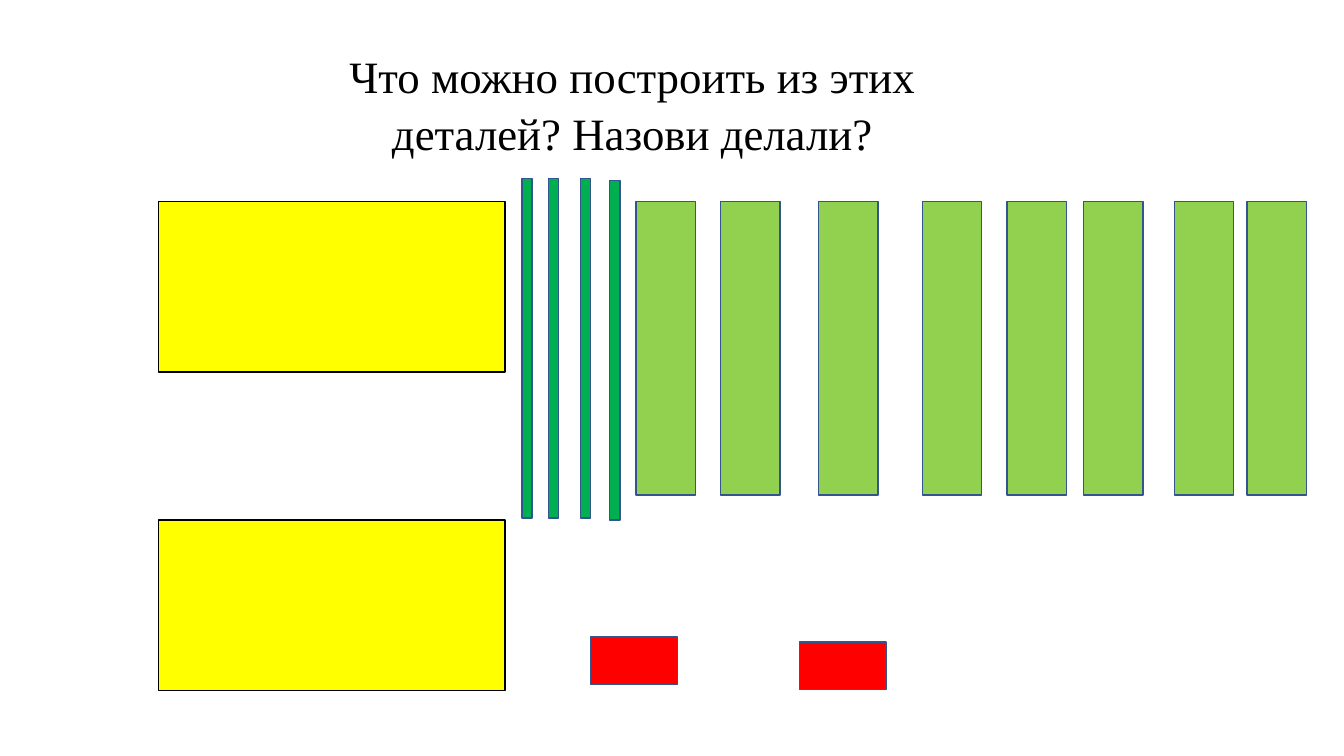
from dataclasses import dataclass

from pptx import Presentation
from pptx.dml.color import RGBColor
from pptx.enum.shapes import MSO_SHAPE
from pptx.enum.text import PP_ALIGN
from pptx.util import Inches, Pt


@dataclass(frozen=True)
class Theme:
    font: str = "Times New Roman"
    size: int = 32
    edge: int = 1
    ink: str = "000000"
    blue: str = "325491"
    yellow: str = "FFFF00"
    green: str = "00B050"
    lime: str = "92D050"
    red: str = "FF0000"


class Board:
    COLS, ROWS = 80, 45

    def __init__(self, deck, theme):
        self.theme = theme
        self.slide = deck.slides.add_slide(deck.slide_layouts[6])
        self.col = deck.slide_width / self.COLS
        self.row = deck.slide_height / self.ROWS

    def place(self, x, y, w, h):
        return (round(x * self.col), round(y * self.row),
                round(w * self.col), round(h * self.row))

    def block(self, spot, size, fill, line):
        shape = self.slide.shapes.add_shape(
            MSO_SHAPE.RECTANGLE, *self.place(*spot, *size))
        shape.shadow.inherit = False
        shape.fill.solid()
        shape.fill.fore_color.rgb = RGBColor.from_string(fill)
        shape.line.color.rgb = RGBColor.from_string(line)
        shape.line.width = Pt(self.theme.edge)

    def blocks(self, spots, size, fill, line):
        for spot in spots:
            self.block(spot, size, fill, line)

    def title(self, text, spot, size):
        box = self.slide.shapes.add_textbox(*self.place(*spot, *size))
        box.text_frame.word_wrap = True
        para = box.text_frame.paragraphs[0]
        para.text = text
        para.alignment = PP_ALIGN.CENTER
        para.line_spacing = 1.05
        para.font.name = self.theme.font
        para.font.size = Pt(self.theme.size)
        para.font.color.rgb = RGBColor.from_string(self.theme.ink)


def main():
    deck = Presentation()
    deck.slide_width, deck.slide_height = Inches(13.33), Inches(7.5)
    theme = Theme()
    board = Board(deck, theme)

    board.title("Что можно построить из этих деталей? Назови делали?",
                (17.64, 2.46), (40.02, 7.08))

    walls = [(9.42, y) for y in (12, 30.96)]
    sticks = [(31.08, 10.62), (32.64, 10.62), (34.56, 10.62), (36.3, 10.74)]
    planks = [(x, 12) for x in
              (37.86, 42.9, 48.72, 54.9, 59.94, 64.5, 69.9, 74.22)]
    bricks = [(35.16, 37.92), (47.58, 38.22)]

    board.blocks(walls, (20.64, 10.14), theme.yellow, theme.ink)
    board.blocks(sticks, (0.6, 20.22), theme.green, theme.blue)
    board.blocks(planks, (3.54, 17.46), theme.lime, theme.blue)
    board.blocks(bricks, (5.16, 2.82), theme.red, theme.blue)

    deck.save("out.pptx")


if __name__ == "__main__":
    main()
